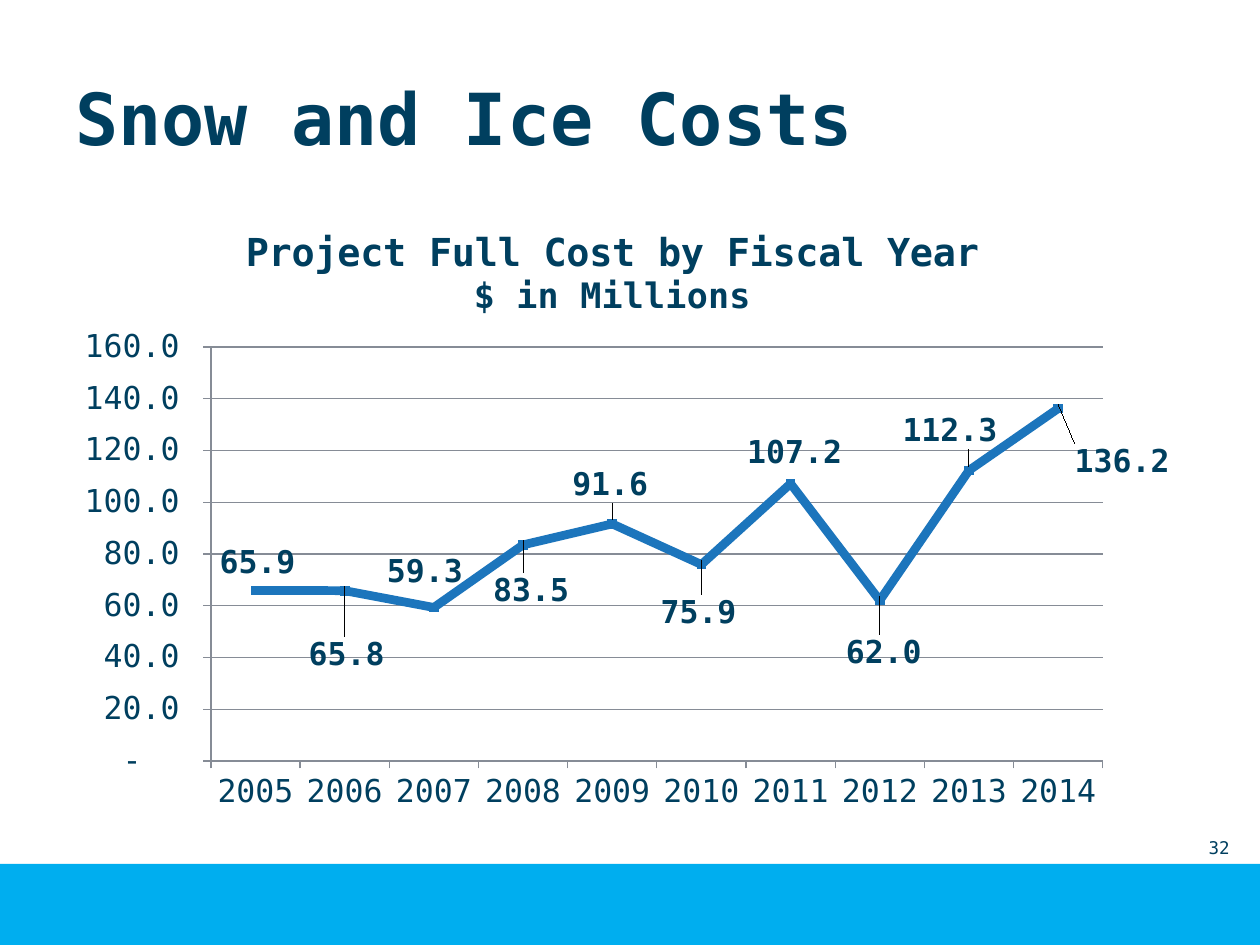
"""Build the snow and ice costs slide with its line chart."""
import pptx
import pptx.chart.data
import pptx.dml.color
import pptx.enum.chart
import pptx.enum.shapes
import pptx.enum.text
import pptx.oxml
import pptx.oxml.ns
import pptx.util

NAVY = pptx.dml.color.RGBColor(0x00, 0x3F, 0x5F)
SKY = pptx.dml.color.RGBColor(0x00, 0xAE, 0xEF)
BLUE = pptx.dml.color.RGBColor(0x1C, 0x75, 0xBC)
GRAY = pptx.dml.color.RGBColor(0x86, 0x8C, 0x96)
FACE = "DejaVu Sans Mono"
WIDE, HIGH = 1260, 945
FRAME = (53, 199, 1134, 624)
PLOT = (158, 148, 892, 414)
COSTS = [65.9, 65.8, 59.3, 83.5, 91.6, 75.9, 107.2, 62.0, 112.3, 136.2]
SHIFTS = [(2, 0), (2, 92), (-9, -8), (8, 74), (-2, -11),
          (-3, 76), (4, -3), (4, 80), (-19, -12), (64, 81)]
FORMAT = '_(* #,##0.0_);_(* \\(#,##0.0\\);_(* "-"??_);_(@_)'


def px(num):
    """Turn pixels into EMU."""
    return pptx.util.Emu(round(num * 914400 / 126))


def style(font, size, bold=False):
    """Set the face, size, weight and colour of a font."""
    font.name, font.size, font.bold = FACE, pptx.util.Pt(size), bold
    font.color.rgb = NAVY


def add_run(para, text, size, bold=False):
    """Add one styled run to a paragraph."""
    run = para.add_run()
    run.text = text
    style(run.font, size, bold)


def add_text(slide, box, text, size, anchor, align, bold=False):
    """Add a wrapped text box with one line."""
    frame = slide.shapes.add_textbox(*map(px, box)).text_frame
    frame.word_wrap = True
    frame.vertical_anchor = anchor
    para = frame.paragraphs[0]
    para.alignment = align
    add_run(para, text, size, bold)


def add_band(slide, box):
    """Add the plain footer band."""
    band = slide.shapes.add_shape(
        pptx.enum.shapes.MSO_SHAPE.RECTANGLE, *map(px, box))
    band.shadow.inherit = False
    band.fill.solid()
    band.fill.fore_color.rgb = SKY
    band.line.fill.background()


def place(node, index, left, top, size=None):
    """Give a chart part a manual layout, in pixels of the chart frame."""
    for old in node.xpath("c:layout"):
        node.remove(old)
    wide, high = FRAME[2:]
    parts = {"x": left / wide, "y": top / high}
    modes = ""
    if size:
        modes = '<c:layoutTarget val="inner"/>'
        parts.update(w=size[0] / wide, h=size[1] / high)
    if node.tag != pptx.oxml.ns.qn("c:dLbl"):
        modes += '<c:xMode val="edge"/><c:yMode val="edge"/>'
    vals = "".join(f'<c:{key} val="{val:.4f}"/>' for key, val in parts.items())
    node.insert(index, pptx.oxml.parse_xml(
        f'<c:layout {pptx.oxml.ns.nsdecls("c")}><c:manualLayout>'
        f"{modes}{vals}</c:manualLayout></c:layout>"))


def add_title(chart):
    """Add the two-line chart title."""
    frame = chart.chart_title.text_frame
    lines = [("Project Full Cost by Fiscal Year", 22), ("$ in Millions", 20)]
    for index, (text, size) in enumerate(lines):
        para = frame.add_paragraph() if index else frame.paragraphs[0]
        para.alignment = pptx.enum.text.PP_ALIGN.CENTER
        add_run(para, text, size, True)


def style_axes(chart):
    """Set scale, ticks, lines and number format of both axes."""
    for axis in (chart.category_axis, chart.value_axis):
        axis.major_tick_mark = pptx.enum.chart.XL_TICK_MARK.OUTSIDE
        axis.minor_tick_mark = pptx.enum.chart.XL_TICK_MARK.NONE
        axis.format.line.color.rgb = GRAY
        axis.format.line.width = pptx.util.Pt(0.75)
        style(axis.tick_labels.font, 18)
    axis = chart.value_axis
    axis.minimum_scale, axis.maximum_scale, axis.major_unit = 0, 160, 20
    axis.has_major_gridlines = True
    axis.major_gridlines.format.line.color.rgb = GRAY
    axis.major_gridlines.format.line.width = pptx.util.Pt(0.75)
    axis.tick_labels.number_format = FORMAT
    axis.tick_labels.number_format_is_linked = False


def style_line(series):
    """Set line, markers and point labels of the series."""
    series.smooth = False
    series.format.line.color.rgb = BLUE
    series.format.line.width = pptx.util.Pt(5)
    mark = series.marker
    mark.style = pptx.enum.chart.XL_MARKER_STYLE.SQUARE
    mark.size = 5
    mark.format.fill.solid()
    mark.format.fill.fore_color.rgb = BLUE
    mark.format.line.color.rgb = BLUE
    labels = series.data_labels
    labels.show_value = True
    labels.number_format = "0.0"
    labels.number_format_is_linked = False
    labels.position = pptx.enum.chart.XL_LABEL_POSITION.ABOVE
    style(labels.font, 18, True)
    for index in range(len(COSTS)):
        label = series.points[index].data_label
        style(label.font, 18, True)
        label.position = pptx.enum.chart.XL_LABEL_POSITION.ABOVE


def add_chart(slide):
    """Add the line chart of costs by year."""
    data = pptx.chart.data.CategoryChartData(number_format="0.0")
    data.categories = [str(2005 + index) for index in range(len(COSTS))]
    data.add_series("Series 1", COSTS)
    chart = slide.shapes.add_chart(
        pptx.enum.chart.XL_CHART_TYPE.LINE_MARKERS,
        *map(px, FRAME), data).chart
    chart.has_legend = False
    style(chart.font, 18)
    chart.plots[0].vary_by_categories = False
    add_title(chart)
    style_axes(chart)
    style_line(chart.plots[0].series[0])
    root = chart.element
    place(root.xpath("c:chart/c:title")[0], 1, 189, 26)
    place(root.xpath("c:chart/c:plotArea")[0], 0, *PLOT[:2], PLOT[2:])
    for node, shift in zip(root.xpath(".//c:dLbl"), SHIFTS):
        place(node, 1, *shift)


def main():
    """Build and save the slide."""
    deck = pptx.Presentation()
    deck.slide_width, deck.slide_height = px(WIDE), px(HIGH)
    slide = deck.slides.add_slide(deck.slide_layouts[6])
    anchor, align = pptx.enum.text.MSO_ANCHOR, pptx.enum.text.PP_ALIGN
    add_band(slide, (0, 864, WIDE, 81))
    add_chart(slide)
    add_text(slide, (1192, 814, 50, 50), "32", 10, anchor.BOTTOM, align.RIGHT)
    add_text(slide, (63, 38, 1134, 158), "Snow and Ice Costs", 41,
             anchor.MIDDLE, align.LEFT, True)
    deck.save("out.pptx")


if __name__ == "__main__":
    main()
